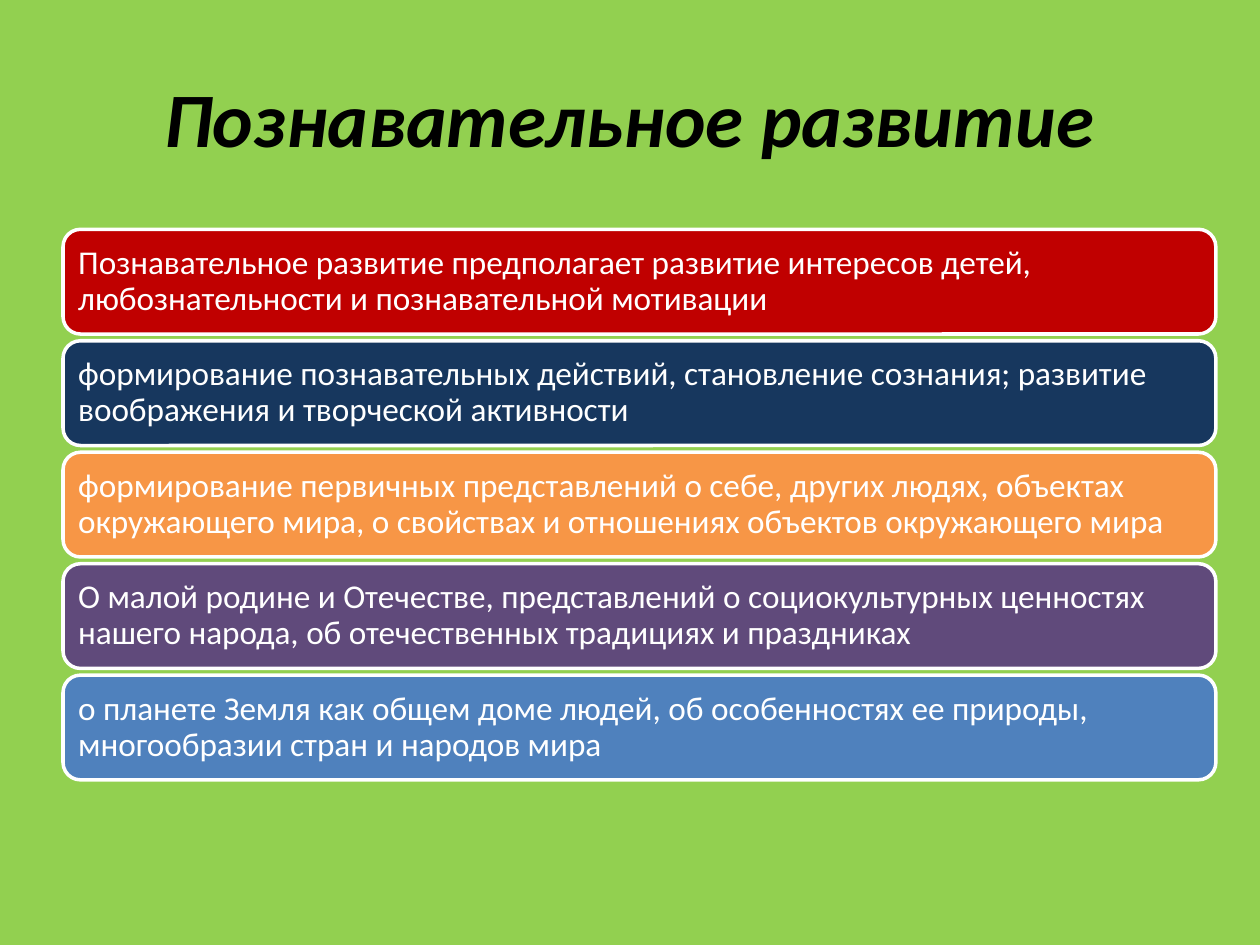
from pptx import Presentation
from pptx import util as u
from pptx.dml.color import RGBColor
from pptx.enum import shapes, text

WIDTH, HEIGHT = 10, 7.5
ROW_SHARE = 0.94  # part of each row pitch filled by its bar
BARS = [
    ("C00000", "Познавательное развитие предполагает развитие интересов детей, "
               "любознательности и познавательной мотивации"),
    ("17375E", "формирование познавательных действий, становление сознания; "
               "развитие воображения и творческой активности"),
    ("F79646", "формирование первичных представлений о себе, других людях, объектах "
               "окружающего мира, о свойствах и отношениях объектов окружающего мира"),
    ("604A7B", "О малой родине и Отечестве, представлений о социокультурных ценностях "
               "нашего народа, об отечественных традициях и праздниках"),
    ("4F81BD", "о планете Земля как общем доме людей, об особенностях ее природы, "
               "многообразии стран и народов мира"),
]


def colour(value):
    return RGBColor.from_string(value)


def place(shape, box):
    shape.left, shape.top, shape.width, shape.height = map(u.Inches, box)


def write(shape, content, size, ink, align, margin, spacing=1.0, bold=False, italic=False):
    frame = shape.text_frame
    frame.word_wrap = True
    frame.auto_size = text.MSO_AUTO_SIZE.NONE
    frame.vertical_anchor = text.MSO_ANCHOR.MIDDLE
    frame.margin_left = frame.margin_right = u.Inches(margin)
    frame.margin_top = frame.margin_bottom = u.Inches(margin)
    paragraph = frame.paragraphs[0]
    paragraph.alignment = align
    paragraph.line_spacing = spacing
    run = paragraph.add_run()
    run.text = content
    font = run.font
    font.name, font.size = "Calibri", u.Pt(size)
    font.bold, font.italic = bold, italic
    font.color.rgb = colour(ink)


def add_title(slide, box, content):
    title = slide.shapes.title
    place(title, box)
    write(title, content, size=44, ink="000000", align=text.PP_ALIGN.CENTER,
          margin=0.05, bold=True, italic=True)


def add_bars(slide, box, bars):
    left, top, width, height = box
    # The last bar ends at the bottom of the box, with no gap below it
    pitch = height / (len(bars) - 1 + ROW_SHARE)
    for row, (fill, content) in enumerate(bars):
        bar = slide.shapes.add_shape(shapes.MSO_SHAPE.ROUNDED_RECTANGLE, 0, 0, 0, 0)
        place(bar, (left, top + row * pitch, width, pitch * ROW_SHARE))
        bar.shadow.inherit = False
        bar.fill.solid()
        bar.fill.fore_color.rgb = colour(fill)
        bar.line.color.rgb = colour("FFFFFF")
        bar.line.width = u.Pt(2)
        write(bar, content, size=19, ink="FFFFFF", align=text.PP_ALIGN.LEFT,
              margin=0.08, spacing=0.9)


def main():
    presentation = Presentation()
    presentation.slide_width = u.Inches(WIDTH)
    presentation.slide_height = u.Inches(HEIGHT)
    slide = presentation.slides.add_slide(presentation.slide_layouts[5])

    # Background
    slide.background.fill.solid()
    slide.background.fill.fore_color.rgb = colour("92D050")

    # Title and stacked bars
    margin = 0.05 * WIDTH
    add_title(slide, (margin, 0.04 * HEIGHT, 0.9 * WIDTH, 1.25), "Познавательное развитие")
    add_bars(slide, (margin, 1.82, 9.15, 4.37), BARS)

    presentation.save("out.pptx")


if __name__ == "__main__":
    main()
